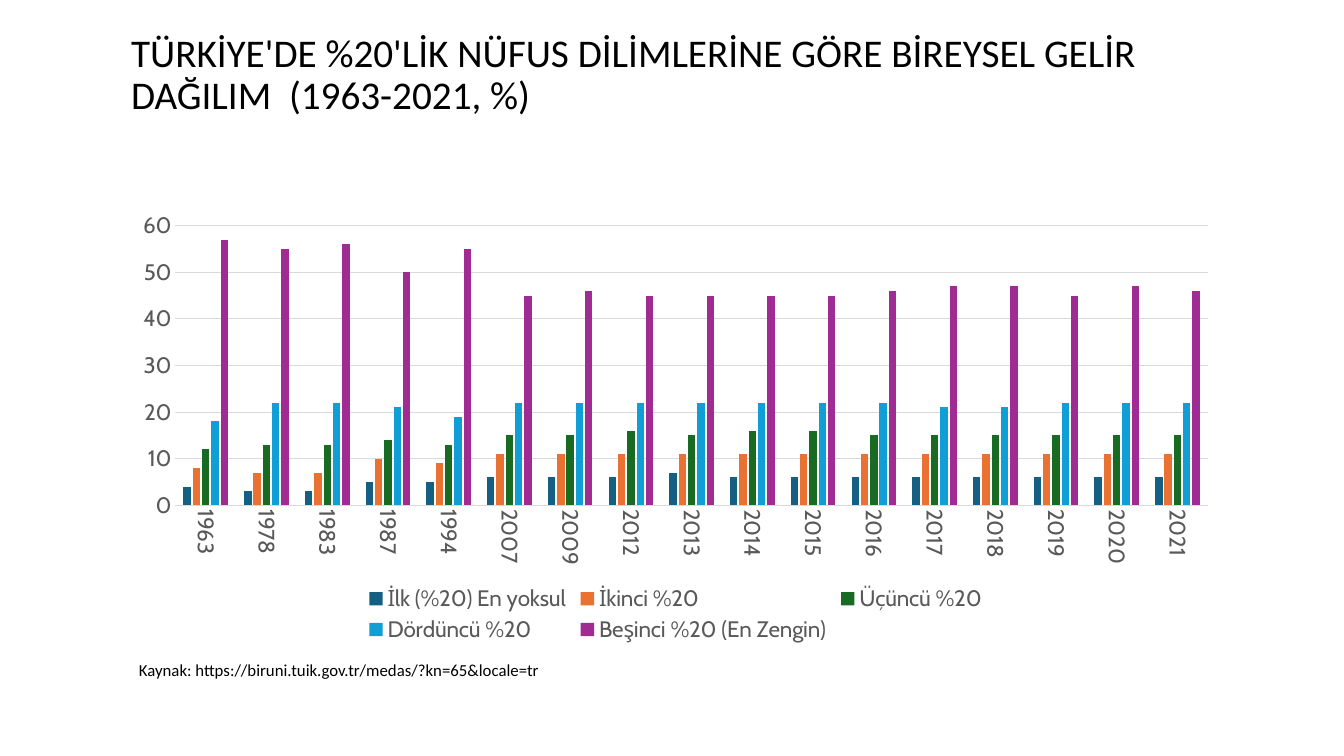
from dataclasses import dataclass

from pptx import Presentation
from pptx.chart.data import CategoryChartData
from pptx.dml.color import RGBColor
from pptx.enum.chart import XL_CHART_TYPE as ChartType
from pptx.enum.chart import XL_LEGEND_POSITION as LegendPosition
from pptx.enum.chart import XL_TICK_MARK as TickMark
from pptx.enum.text import MSO_ANCHOR as Anchor
from pptx.enum.text import MSO_AUTO_SIZE as AutoSize
from pptx.enum.text import PP_ALIGN as Align
from pptx.util import Inches, Pt


@dataclass(frozen=True)
class Theme:
    text_font: str = "Calibri"
    chart_font: str = "Cabin"
    ink: str = "000000"
    label: str = "595959"
    rule: str = "D9D9D9"
    title_size: float = 28
    label_size: float = 16
    source_size: float = 12
    rule_width: float = 0.75


THEME = Theme()

TITLE = "TÜRKİYE'DE %20'LİK NÜFUS DİLİMLERİNE GÖRE BİREYSEL GELİR DAĞILIM  (1963-2021, %)"
SOURCE = "Kaynak: https://biruni.tuik.gov.tr/medas/?kn=65&locale=tr"
YEARS = [1963, 1978, 1983, 1987, 1994, 2007, 2009, *range(2012, 2022)]
INCOME_SHARES = [
    ("İlk (%20) En yoksul", "156082",
     [4, 3, 3, 5, 5, 6, 6, 6, 7, 6, 6, 6, 6, 6, 6, 6, 6]),
    ("İkinci %20", "E97132",
     [8, 7, 7, 10, 9, 11, 11, 11, 11, 11, 11, 11, 11, 11, 11, 11, 11]),
    ("Üçüncü %20", "196B24",
     [12, 13, 13, 14, 13, 15, 15, 16, 15, 16, 16, 15, 15, 15, 15, 15, 15]),
    ("Dördüncü %20", "0F9ED5",
     [18, 22, 22, 21, 19, 22, 22, 22, 22, 22, 22, 22, 21, 21, 22, 22, 22]),
    ("Beşinci %20 (En Zengin)", "A02B93",
     [57, 55, 56, 50, 55, 45, 46, 45, 45, 45, 45, 46, 47, 47, 45, 47, 46]),
]


def place(shape, box):
    shape.left, shape.top, shape.width, shape.height = map(Inches, box)


def style_font(font, name, size, color):
    font.name = name
    font.size = Pt(size)
    font.bold = False
    font.color.rgb = RGBColor.from_string(color)


def style_chart_font(font):
    style_font(font, THEME.chart_font, THEME.label_size, THEME.label)


def style_rule(line):
    line.color.rgb = RGBColor.from_string(THEME.rule)
    line.width = Pt(THEME.rule_width)


def add_run(para, text, size):
    span = para.add_run()
    span.text = text
    style_font(span.font, THEME.text_font, size, THEME.ink)


def fill_title(page, box):
    title = page.shapes.title
    place(title, box)
    frame = title.text_frame
    frame.word_wrap = True
    frame.auto_size = AutoSize.NONE
    frame.vertical_anchor = Anchor.MIDDLE
    para = frame.paragraphs[0]
    para.alignment = Align.LEFT
    para.line_spacing = 0.9
    add_run(para, TITLE, THEME.title_size)


def style_axes(chart):
    years, shares = chart.category_axis, chart.value_axis
    for axis in (years, shares):
        axis.major_tick_mark = axis.minor_tick_mark = TickMark.NONE
        style_chart_font(axis.tick_labels.font)
    style_rule(years.format.line)
    # Year labels read downwards: 90 degrees in 60000ths
    label_body = years._element.txPr.bodyPr
    label_body.set("rot", "5400000")
    label_body.set("vert", "horz")
    shares.minimum_scale, shares.maximum_scale, shares.major_unit = 0, 60, 10
    shares.format.line.fill.background()
    style_rule(shares.major_gridlines.format.line)


def add_income_chart(page, box):
    data = CategoryChartData()
    data.categories = [str(year) for year in YEARS]
    for name, _, values in INCOME_SHARES:
        data.add_series(name, values)
    chart = page.shapes.add_chart(
        ChartType.COLUMN_CLUSTERED, *map(Inches, box), data).chart
    chart.has_title = False
    style_chart_font(chart.font)
    style_axes(chart)

    plot = chart.plots[0]
    plot.gap_width, plot.overlap = 219, -27
    plot.vary_by_categories = False
    for series, (_, color, _) in zip(plot.series, INCOME_SHARES):
        series.format.fill.solid()
        series.format.fill.fore_color.rgb = RGBColor.from_string(color)

    chart.has_legend = True
    chart.legend.position = LegendPosition.BOTTOM
    chart.legend.include_in_layout = False
    style_chart_font(chart.legend.font)


def add_source(page, box):
    frame = page.shapes.add_textbox(*map(Inches, box)).text_frame
    frame.word_wrap = True
    frame.auto_size = AutoSize.SHAPE_TO_FIT_TEXT
    add_run(frame.paragraphs[0], SOURCE, THEME.source_size)


def main():
    deck = Presentation()
    deck.slide_width, deck.slide_height = Inches(13.33), Inches(7.5)
    page = deck.slides.add_slide(deck.slide_layouts[5])
    fill_title(page, (1.2, 0.31, 11, 0.88))
    add_income_chart(page, (1.2, 2.02, 11, 4.4))
    add_source(page, (1.28, 6.5, 6.67, 0.3))
    deck.save("out.pptx")


if __name__ == "__main__":
    main()
